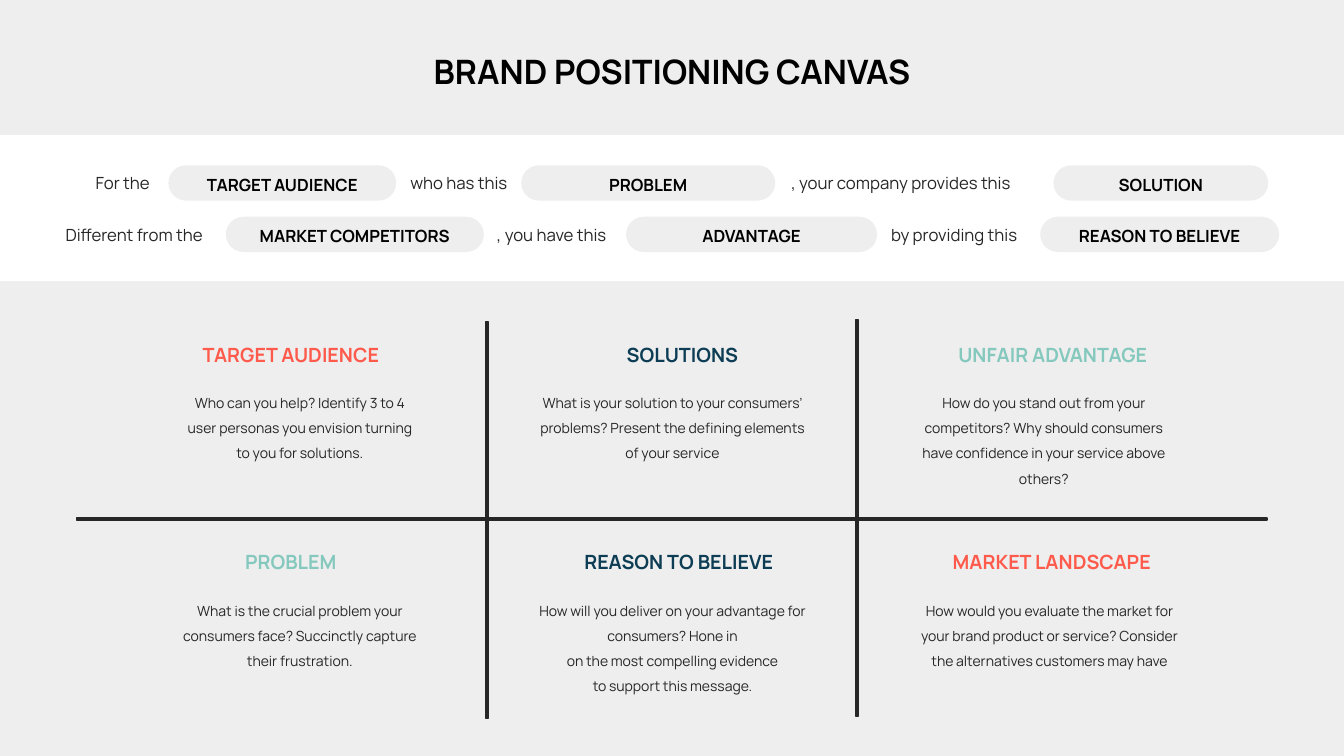
import pptx
import pptx.util
import pptx.dml.color
import pptx.enum.shapes
import pptx.enum.text

TITLE = "BRAND POSITIONING CANVAS"
STATEMENT = [
    [("For the", 7.12, "TARGET AUDIENCE", 12.53, 16.95),
     ("who has this", 30.53, "PROBLEM", 38.78, 18.9),
     (", your company provides this", 58.88, "SOLUTION", 78.38, 15.98)],
    [("Different from the", 4.88, "MARKET COMPETITORS", 16.8, 19.2),
     (", you have this", 36.98, "ADVANTAGE", 46.58, 18.68),
     ("by providing this", 66.3, "REASON TO BELIEVE", 77.4, 17.78)],
]
CANVAS = [
    [("TARGET AUDIENCE", "coral", 21.64, 22.31, 17.18,
      ["Who can you help? Identify 3 to 4 user personas you envision turning to you for solutions."]),
     ("SOLUTIONS", "navy", 50.78, 50.03, 19.95,
      ["What is your solution to your consumers’ problems? Present the defining elements of your service"]),
     ("UNFAIR ADVANTAGE", "mint", 78.34, 77.66, 19.13,
      ["How do you stand out from your competitors? Why should consumers have confidence in your service above others?"])],
    [("PROBLEM", "mint", 21.64, 22.31, 18.08,
      ["What is the crucial problem your consumers face? Succinctly capture their frustration."]),
     ("REASON TO BELIEVE", "navy", 50.51, 50.03, 20.4,
      ["How will you deliver on your advantage for consumers? Hone in",
       "on the most compelling evidence",
       "to support this message."]),
     ("MARKET LANDSCAPE", "coral", 78.26, 78.08, 20.4,
      ["How would you evaluate the market for your brand product or service? Consider the alternatives customers may have"])],
]
RULES = [(5.7, 68.53, 88.58, 0.27), (36.15, 42.53, 0.15, 52.53), (63.68, 42.27, 0.15, 52.53)]
BAND = (0, 17.87, 100, 19.33)
PILL_TOP, PILL_PITCH, PILL_HEIGHT = 21.87, 6.8, 4.67
HEAD_TOP, BODY_TOP, CELL_PITCH = 45.33, 51.07, 27.47
HEAD_WIDTH, HEAD_HEIGHT, BODY_HEIGHT = 22, 3.2, 11

THEME = {
    "font": "Manrope",
    "colours": {"black": "000000", "ink": "262626", "grey": "EEEEEE", "white": "FFFFFF",
                "coral": "FF5B4C", "navy": "0C3D54", "mint": "85C8BD"},
    "title": {"size": 24, "bold": True},
    "heading": {"size": 14, "bold": True},
    "pill": {"size": 12, "bold": True},
    "prompt": {"size": 12, "bold": False},
    "body": {"size": 10, "bold": False},
}
ALIGN = pptx.enum.text.PP_ALIGN
ANCHOR = pptx.enum.text.MSO_ANCHOR
SHAPE = pptx.enum.shapes.MSO_SHAPE

prs = pptx.Presentation()
prs.slide_width = pptx.util.Inches(13.33)
prs.slide_height = pptx.util.Inches(7.5)
s = prs.slides.add_slide(prs.slide_layouts[5])


def colour(name):
    return pptx.dml.color.RGBColor.from_string(THEME["colours"][name])


def place(x, y, w, h):
    return [int(share * side / 100) for share, side in
            zip((x, y, w, h), (prs.slide_width, prs.slide_height) * 2)]


def write(sp, lines, style, ink, align=ALIGN.CENTER, anchor=ANCHOR.MIDDLE, spacing=1.0):
    tf = sp.text_frame
    frame = {"word_wrap": True, "auto_size": pptx.enum.text.MSO_AUTO_SIZE.NONE,
             "vertical_anchor": anchor, "margin_left": 0, "margin_right": 0,
             "margin_top": 0, "margin_bottom": 0}
    for key, value in frame.items():
        setattr(tf, key, value)
    font = {"name": THEME["font"], "size": pptx.util.Pt(THEME[style]["size"]),
            "bold": THEME[style]["bold"]}
    for i, line in enumerate(lines):
        p = tf.add_paragraph() if i else tf.paragraphs[0]
        p.alignment, p.line_spacing = align, spacing
        r = p.add_run()
        r.text = line
        for key, value in font.items():
            setattr(r.font, key, value)
        r.font.color.rgb = colour(ink)


def add_text(box, *args, **kwargs):
    write(s.shapes.add_textbox(*place(*box)), *args, **kwargs)


def add_block(kind, box, fill, line=None):
    sp = s.shapes.add_shape(kind, *place(*box))
    sp.shadow.inherit = False
    sp.fill.solid()
    sp.fill.fore_color.rgb = colour(fill)
    if line:
        sp.line.color.rgb = colour(line)
        sp.line.width = pptx.util.Pt(1)
    else:
        sp.line.fill.background()
    return sp


s.background.fill.solid()
s.background.fill.fore_color.rgb = colour("grey")
title = s.shapes.title
title.left, title.top, title.width, title.height = place(21.2, 6.67, 57.6, 5.33)
write(title, [TITLE], "title", "black")

for row, cells in enumerate(CANVAS):
    shift = row * CELL_PITCH
    for heading, ink, head_mid, body_mid, width, lines in cells:
        add_text((head_mid - HEAD_WIDTH / 2, HEAD_TOP + shift, HEAD_WIDTH, HEAD_HEIGHT),
                 [heading], "heading", ink, anchor=ANCHOR.TOP)
        add_text((body_mid - width / 2, BODY_TOP + shift, width, BODY_HEIGHT),
                 lines, "body", "ink", anchor=ANCHOR.TOP, spacing=1.5)

for rule in RULES:
    add_block(SHAPE.RECTANGLE, rule, "grey", "ink")

add_block(SHAPE.ROUNDED_RECTANGLE, BAND, "white").adjustments[0] = 0
for row, parts in enumerate(STATEMENT):
    top = PILL_TOP + row * PILL_PITCH
    for prompt, x, label, pill_x, pill_w in parts:
        add_text((x, top, pill_x - x, PILL_HEIGHT), [prompt], "prompt", "ink", align=ALIGN.LEFT)
        pill = add_block(SHAPE.ROUNDED_RECTANGLE, (pill_x, top, pill_w, PILL_HEIGHT), "grey")
        pill.adjustments[0] = 0.5
        write(pill, [label], "pill", "black", spacing=1.17)

prs.save("out.pptx")
